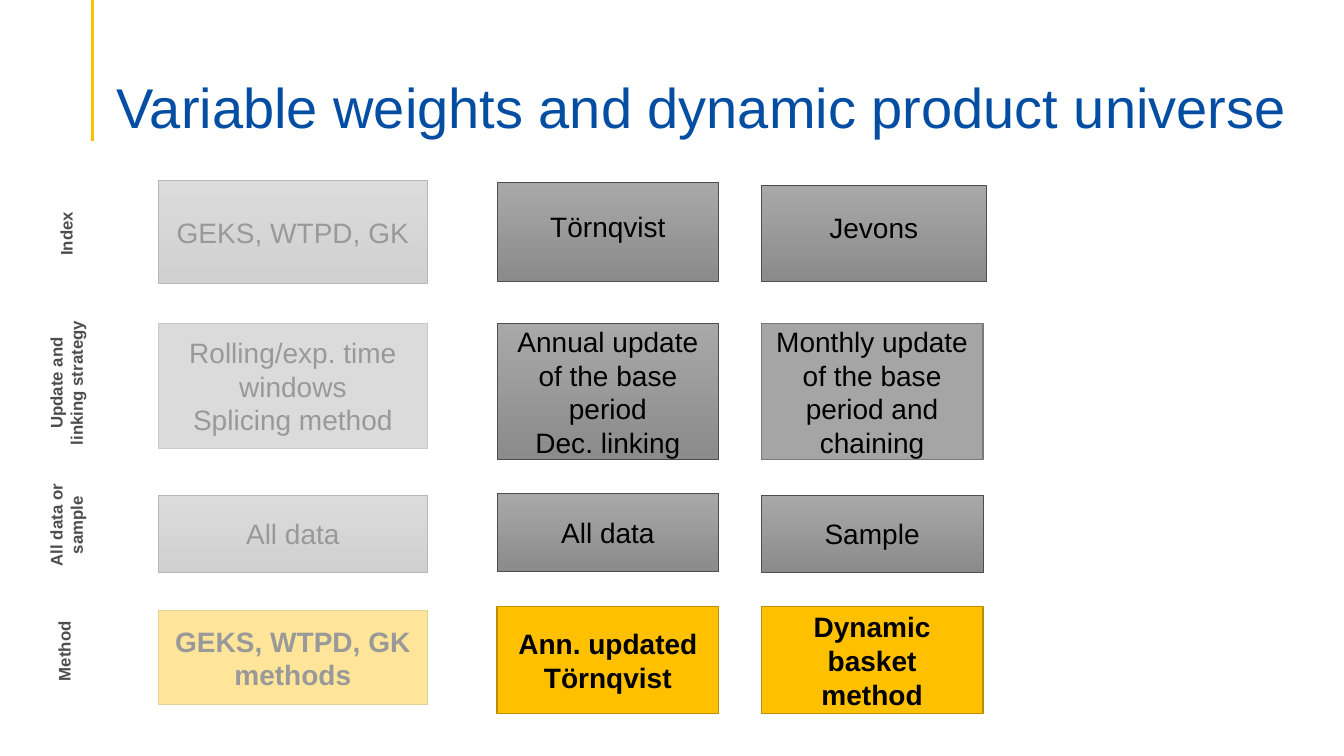
from dataclasses import dataclass

from lxml import etree
from pptx import Presentation
from pptx import util as u
from pptx.dml.color import RGBColor
from pptx.enum import shapes, text
from pptx.oxml.ns import qn

WIDTH, HEIGHT = u.Inches(13.33), u.Inches(7.5)
COLOURS = {
    "accent": "FFC000", "accent_edge": "BD8E00", "title": "034EA2",
    "label": "4D4D4D", "flat": "A5A5A5", "flat_edge": "7A7A7A",
    "light": "A8A8A8", "dark": "8B8B8B", "ink": "000000", "white": "FFFFFF",
}
COLUMNS = [(11.78, 20.03), (36.98, 16.5), (56.64, 16.5)]


@dataclass(frozen=True)
class Area:
    """Position and size in percent of the slide."""
    left: float
    top: float
    width: float
    height: float

    def lengths(self) -> tuple[int, int, int, int]:
        """Convert the shares to slide lengths."""
        return (across(self.left), down(self.top),
                across(self.width), down(self.height))


@dataclass(frozen=True)
class Lettering:
    """Size, colour and weight of a text."""
    size: float
    colour: str
    bold: bool = False


@dataclass(frozen=True)
class Style:
    """Fill, edge and weight of a step box."""
    fill: tuple[str, ...]
    edge: str
    edge_width: float
    bold: bool = False


@dataclass(frozen=True)
class Step:
    """One box of the method grid."""
    column: int
    top: float
    height: float
    style: Style
    lines: tuple[str, ...]
    lift: float = 0
    extra_width: float = 0


@dataclass(frozen=True)
class RowLabel:
    """Rotated caption of a grid row."""
    area: Area
    lines: tuple[str, ...]


SHADED = Style(("light", "dark"), "label", 0.5)
FLAT = Style(("flat",), "flat_edge", 1)
METHOD = Style(("accent",), "accent_edge", 1, True)

STEPS = [
    Step(0, 23.87, 13.6, SHADED, ("GEKS, WTPD, GK",)),
    Step(1, 24.13, 13.07, SHADED, ("Törnqvist",), 1.5),
    Step(2, 24.53, 12.67, SHADED, ("Jevons",), 1.5, 0.25),
    Step(0, 42.8, 16.53, FLAT, ("Rolling/exp. time windows", "Splicing method")),
    Step(1, 42.8, 18, SHADED, ("Annual update of the base period", "Dec. linking")),
    Step(2, 42.8, 18, FLAT, ("Monthly update of the base period and chaining",)),
    Step(0, 65.47, 10.27, SHADED, ("All data",)),
    Step(1, 65.33, 10.27, SHADED, ("All data",)),
    Step(2, 65.47, 10.27, SHADED, ("Sample",)),
    Step(0, 80.8, 12.4, METHOD, ("GEKS, WTPD, GK", "methods")),
    Step(1, 80.27, 14.13, METHOD, ("Ann. updated Törnqvist",)),
    Step(2, 80.27, 14.13, METHOD, ("Dynamic basket", "method")),
]
ROW_LABELS = [
    RowLabel(Area(2.33, 28.93, 5.18, 4), ("Index",)),
    RowLabel(Area(-0.75, 47.33, 11.33, 6.67), ("Update and linking strategy",)),
    RowLabel(Area(0.9, 66.13, 8.03, 6.67), ("All data or", "sample")),
    RowLabel(Area(2.48, 82.8, 6.08, 6.67), ("Method",)),
]


def across(share: float) -> int:
    """Length of a percentage of the slide width."""
    return round(WIDTH * share / 100)


def down(share: float) -> int:
    """Length of a percentage of the slide height."""
    return round(HEIGHT * share / 100)


def rgb(name: str) -> RGBColor:
    """Look up a named colour."""
    return RGBColor.from_string(COLOURS[name])


def write(frame, lines: tuple[str, ...], lettering: Lettering,
          align=text.PP_ALIGN.CENTER, anchor=text.MSO_ANCHOR.MIDDLE) -> None:
    """Fill a text frame with one paragraph per line."""
    frame.word_wrap = True
    frame.vertical_anchor = anchor
    frame.text = "\n".join(lines)
    for paragraph in frame.paragraphs:
        paragraph.alignment = align
        paragraph.font.name = "Arial"
        paragraph.font.size = u.Pt(lettering.size)
        paragraph.font.bold = lettering.bold
        paragraph.font.color.rgb = rgb(lettering.colour)


def draw_heading(slide) -> None:
    """Draw the accent line and the title."""
    x = across(6.9)
    accent = slide.shapes.add_connector(shapes.MSO_CONNECTOR.STRAIGHT, x, 0, x, down(18.67))
    accent.line.color.rgb = rgb("accent")
    accent.line.width = u.Pt(2.25)
    etree.SubElement(accent.element.spPr, qn("a:effectLst"))
    title = slide.shapes.add_textbox(*Area(7.95, 7.07, 89.57, 11.47).lengths()).text_frame
    write(title, ("Variable weights and dynamic product universe",),
          Lettering(40, "title"), text.PP_ALIGN.LEFT, text.MSO_ANCHOR.BOTTOM)
    title.margin_bottom = 0
    title.paragraphs[0].line_spacing = 0.9


def draw_label(slide, label: RowLabel) -> None:
    """Draw a rotated row caption."""
    caption = slide.shapes.add_textbox(*label.area.lengths())
    caption.rotation = 270
    write(caption.text_frame, label.lines, Lettering(12, "label", True),
          anchor=text.MSO_ANCHOR.TOP)


def draw_step(slide, step: Step) -> None:
    """Draw a box of the method grid."""
    left, width = COLUMNS[step.column]
    area = Area(left, step.top, width + step.extra_width, step.height)
    box = slide.shapes.add_shape(shapes.MSO_SHAPE.RECTANGLE, *area.lengths())
    box.shadow.inherit = False
    style = step.style
    if len(style.fill) > 1:
        box.fill.gradient()
        box.fill.gradient_angle = 270
        for stop, name in zip(box.fill.gradient_stops, style.fill):
            stop.color.rgb = rgb(name)
    else:
        box.fill.solid()
        box.fill.fore_color.rgb = rgb(style.fill[0])
    box.line.color.rgb = rgb(style.edge)
    box.line.width = u.Pt(style.edge_width)
    write(box.text_frame, step.lines, Lettering(20, "ink", style.bold))
    box.text_frame.margin_bottom += down(step.lift)


def draw_veil(slide) -> None:
    """Fade the first column with a translucent white panel."""
    veil = slide.shapes.add_shape(
        shapes.MSO_SHAPE.RECTANGLE, *Area(8.55, 19.47, 26.11, 79.6).lengths())
    veil.shadow.inherit = False
    veil.fill.solid()
    veil.fill.fore_color.rgb = rgb("white")
    veil.line.fill.background()
    tint = veil.element.spPr.find(qn("a:solidFill")).find(qn("a:srgbClr"))
    etree.SubElement(tint, qn("a:alpha"), val="60000")


def main() -> None:
    """Build and save the slide."""
    deck = Presentation()
    deck.slide_width, deck.slide_height = WIDTH, HEIGHT
    slide = deck.slides.add_slide(deck.slide_layouts[6])
    draw_heading(slide)
    for label in ROW_LABELS:
        draw_label(slide, label)
    for step in STEPS:
        draw_step(slide, step)
    draw_veil(slide)
    deck.save("out.pptx")


if __name__ == "__main__":
    main()
